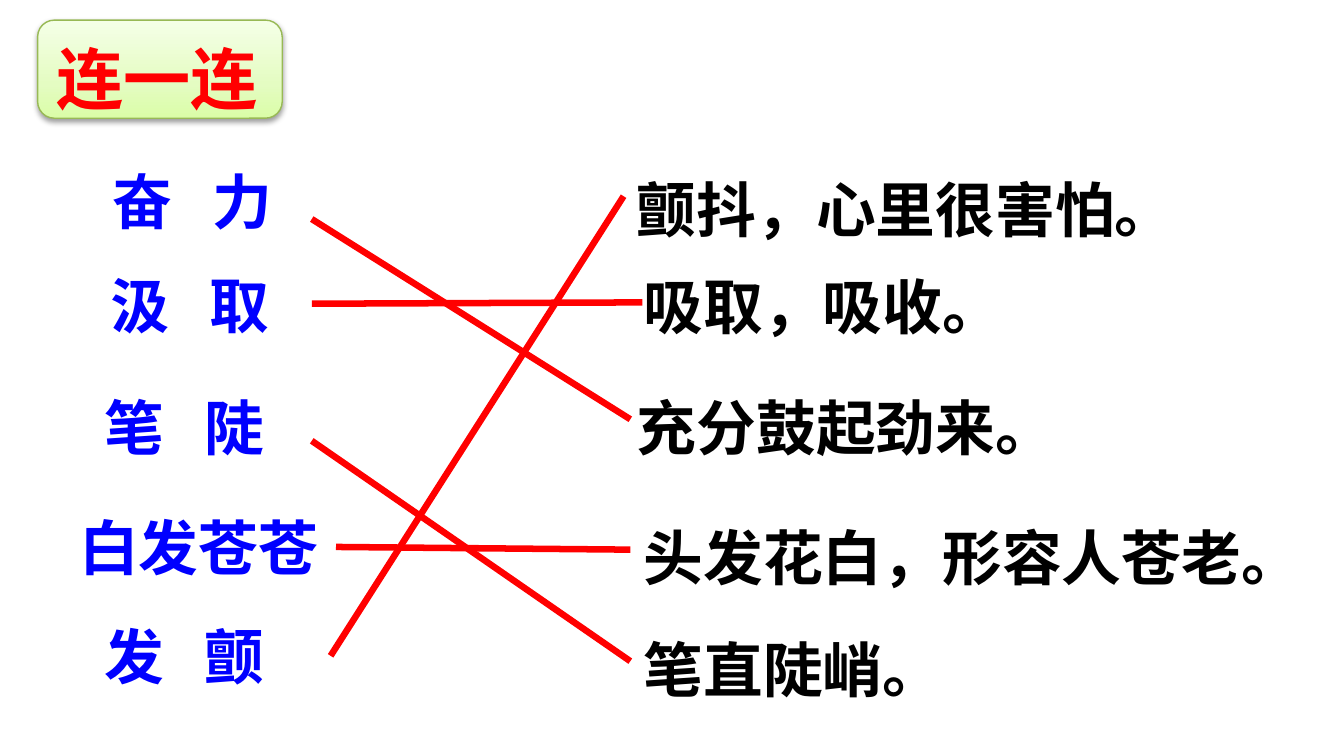
from dataclasses import dataclass

from lxml.etree import SubElement
from pptx import Presentation
from pptx.dml.color import RGBColor
from pptx.enum.shapes import MSO_CONNECTOR, MSO_SHAPE
from pptx.enum.text import MSO_AUTO_SIZE
from pptx.oxml import parse_xml
from pptx.oxml.ns import nsdecls, qn
from pptx.util import Inches, Pt


@dataclass(frozen=True)
class Theme:
    font: str = "Noto Sans CJK SC"
    title: str = "FF0000"
    term: str = "0000FF"
    meaning: str = "000000"
    match: str = "FF0000"
    badge_line: str = "98B955"
    badge_stops: tuple = ((0, "DAFDA7"), (35, "E4FCC2"), (100, "F5FFE7"))
    title_size: int = 36
    body_size: int = 32
    match_width: float = 3.5


THEME = Theme()
TAB = Inches(0.74)

# text, left, top, width
TERMS = [
    ("奋\t力", 0.74, 1.18, 2.37),
    ("汲\t取", 0.72, 1.95, 2.38),
    ("笔\t陡", 0.68, 2.86, 1.78),
    ("白发苍苍", 0.49, 3.75, 2),
    ("发\t颤", 0.68, 4.56, 1.78),
]
MEANINGS = [
    ("颤抖，心里很害怕。", 4.64, 1.13, 4.26),
    ("吸取，吸收。", 4.69, 1.85, 2.9),
    ("充分鼓起劲来。", 4.64, 2.75, 3.99),
    ("头发花白，形容人苍老。", 4.69, 3.72, 5.16),
    ("笔直陡峭。", 4.69, 4.55, 2.45),
]
# start and end of each answer line
MATCHES = [
    ((2.32, 1.63), (4.69, 3.12)),
    ((2.32, 2.26), (4.78, 2.25)),
    ((2.32, 3.28), (4.69, 4.92)),
    ((2.5, 4.07), (4.69, 4.09)),
    ((2.46, 4.88), (4.64, 1.46)),
]


def add_badge(slide):
    """Add the rounded title plate with its gradient and soft shadow."""
    s = slide.shapes.add_shape(MSO_SHAPE.ROUNDED_RECTANGULAR_CALLOUT,
                               Inches(0.28), Inches(0.15), Inches(1.82), Inches(0.73))
    for i, value in enumerate((0.24, -0.5, 0.17)):
        s.adjustments[i] = value
    s.fill.gradient()
    s.fill.gradient_angle = 90
    stops = s._element.spPr.find(qn("a:gradFill")).find(qn("a:gsLst"))
    stops.clear()
    for position, color in THEME.badge_stops:
        stop = SubElement(stops, qn("a:gs"), pos=str(position * 1000))
        SubElement(stop, qn("a:srgbClr"), val=color)
    s.line.color.rgb = RGBColor.from_string(THEME.badge_line)
    s.line.width = Pt(0.75)
    s.shadow.inherit = False
    s._element.spPr.find(qn("a:effectLst")).append(parse_xml(
        f'<a:outerShdw {nsdecls("a")} blurRad="{Pt(3.1)}" dist="{Pt(1.6)}" '
        'dir="5400000" rotWithShape="0"><a:srgbClr val="000000">'
        '<a:alpha val="38000"/></a:srgbClr></a:outerShdw>'))


def add_text(slide, text, left, top, width, height, size, color, spacing=None):
    s = slide.shapes.add_textbox(Inches(left), Inches(top), Inches(width), Inches(height))
    tf = s.text_frame
    tf.word_wrap = True
    tf.auto_size = MSO_AUTO_SIZE.SHAPE_TO_FIT_TEXT
    p = tf.paragraphs[0]
    p.text = text
    if "\t" in text:
        tabs = SubElement(p._p.get_or_add_pPr(), qn("a:tabLst"))
        SubElement(tabs, qn("a:tab"), pos=str(TAB), algn="l")
    if spacing:
        p.line_spacing = spacing
    for r in p.runs:
        r.font.name = THEME.font
        r.font.size = Pt(size)
        r.font.bold = True
        r.font.color.rgb = RGBColor.from_string(color)
        SubElement(r._r.get_or_add_rPr(), qn("a:ea"), typeface=THEME.font)


def add_match(slide, start, end):
    points = [Inches(v) for v in (*start, *end)]
    line = slide.shapes.add_connector(MSO_CONNECTOR.STRAIGHT, *points)
    line.line.color.rgb = RGBColor.from_string(THEME.match)
    line.line.width = Pt(THEME.match_width)
    SubElement(line._element.spPr, qn("a:effectLst"))


def main():
    prs = Presentation()
    prs.slide_width = Inches(10)
    prs.slide_height = prs.slide_width * 9 // 16
    slide = prs.slides.add_slide(prs.slide_layouts[6])

    add_badge(slide)
    add_text(slide, "连一连", 0.32, 0.11, 2.24, 0.83, THEME.title_size, THEME.title, 1.2)
    for term in TERMS:
        add_text(slide, *term, 0.64, THEME.body_size, THEME.term)
    for meaning in MEANINGS:
        add_text(slide, *meaning, 0.75, THEME.body_size, THEME.meaning, 1.2)
    for start, end in MATCHES:
        add_match(slide, start, end)

    prs.save("out.pptx")


if __name__ == "__main__":
    main()
